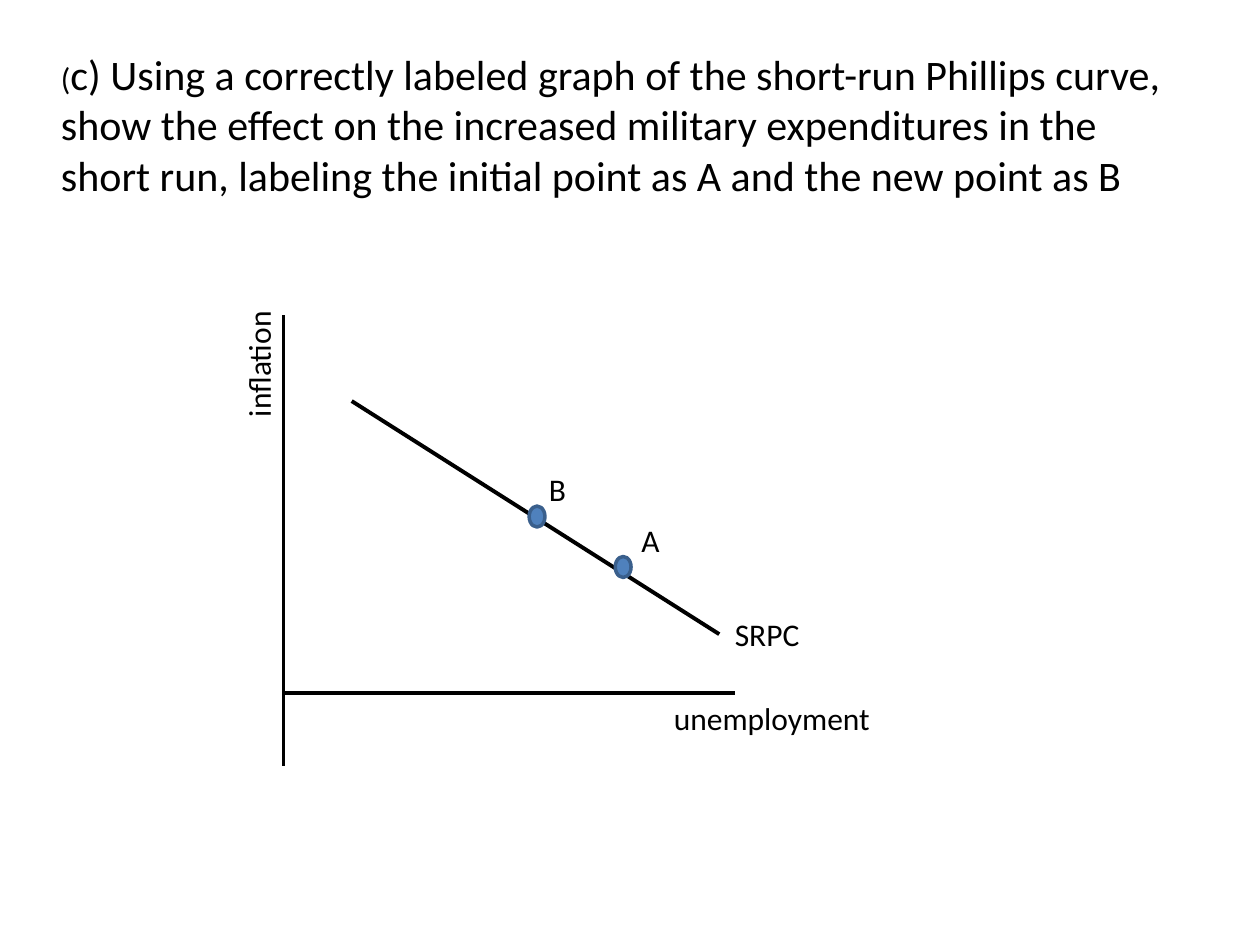
import pptx
import pptx.dml.color
import pptx.enum.shapes
import pptx.enum.text
import pptx.util
from lxml import etree

BLACK = pptx.dml.color.RGBColor(0x00, 0x00, 0x00)
POINT_FILL = pptx.dml.color.RGBColor(0x4F, 0x81, 0xBD)
POINT_EDGE = pptx.dml.color.RGBColor(0x3A, 0x5F, 0x8C)
FONT = "Calibri"

SLIDE_WIDTH = pptx.util.Inches(10)
SLIDE_HEIGHT = pptx.util.Inches(7.5)

# The page is a grid of 120 columns by 90 rows
COLUMN = SLIDE_WIDTH / 120
ROW = SLIDE_HEIGHT / 90

LABEL_SIZE = (25, 4.8)
POINT_SIZE = (1.5, 2)

AXES = [
    ((27, 30), (27, 73)),
    ((27, 66), (70, 66)),
]
CURVE = ((33.5, 38.2), (68.5, 60.4))

# Name, left and top of each point, then left and top of its label
POINTS = [
    ("A", (58.6, 53), (59.9, 49)),
    ("B", (50.4, 48.2), (51.1, 44.2)),
]

# Text, left, top and rotation
LABELS = [
    ("unemployment", (63, 66), 0),
    ("inflation", (12.1, 26), 270),
    ("SRPC", (68.8, 58), 0),
]


def grid(place):
    column, row = place
    return round(column * COLUMN), round(row * ROW)


def add_span(para, text, size):
    span = para.add_run()
    span.text = text
    span.font.name = FONT
    span.font.size = pptx.util.Pt(size)
    span.font.color.rgb = BLACK


def set_title(page):
    box = page.shapes.title
    box.left, box.top = grid((4.6, 4))
    box.width, box.height = grid((108, 15.7))
    frame = box.text_frame
    frame.word_wrap = True
    frame.auto_size = pptx.enum.text.MSO_AUTO_SIZE.NONE
    frame.vertical_anchor = pptx.enum.text.MSO_ANCHOR.TOP
    para = frame.paragraphs[0]
    para.alignment = pptx.enum.text.PP_ALIGN.LEFT
    add_span(para, "(", 18)
    add_span(
        para,
        "c) Using a correctly labeled graph of the short-run Phillips curve, "
        "show the effect on the increased military expenditures in the "
        "short run, labeling the initial point as A and the new point as B",
        24,
    )


def add_line(page, start, end):
    line = page.shapes.add_connector(
        pptx.enum.shapes.MSO_CONNECTOR.STRAIGHT, *grid(start), *grid(end)
    )
    line.line.color.rgb = BLACK
    line.line.width = pptx.util.Pt(2.25)
    # An empty effect list removes the theme shadow
    etree.SubElement(
        line.element.spPr, pptx.oxml.ns.qn("a:effectLst")
    )


def add_label(page, text, place, rotation=0):
    box = page.shapes.add_textbox(*grid(place), *grid(LABEL_SIZE))
    box.rotation = rotation
    box.text_frame.word_wrap = True
    add_span(box.text_frame.paragraphs[0], text, 18)


def add_point(page, place):
    point = page.shapes.add_shape(
        pptx.enum.shapes.MSO_SHAPE.OVAL, *grid(place), *grid(POINT_SIZE)
    )
    point.shadow.inherit = False
    point.fill.solid()
    point.fill.fore_color.rgb = POINT_FILL
    point.line.color.rgb = POINT_EDGE
    point.line.width = pptx.util.Pt(2)


def main():
    deck = pptx.Presentation()
    deck.slide_width = SLIDE_WIDTH
    deck.slide_height = SLIDE_HEIGHT
    page = deck.slides.add_slide(deck.slide_layouts.get_by_name("Title Only"))

    # Question
    set_title(page)

    # Axes and short-run Phillips curve
    for start, end in AXES + [CURVE]:
        add_line(page, start, end)
    for text, place, rotation in LABELS:
        add_label(page, text, place, rotation)

    # Initial and new points
    for name, place, label_place in POINTS:
        add_point(page, place)
        add_label(page, name, label_place)

    deck.save("out.pptx")


if __name__ == "__main__":
    main()
